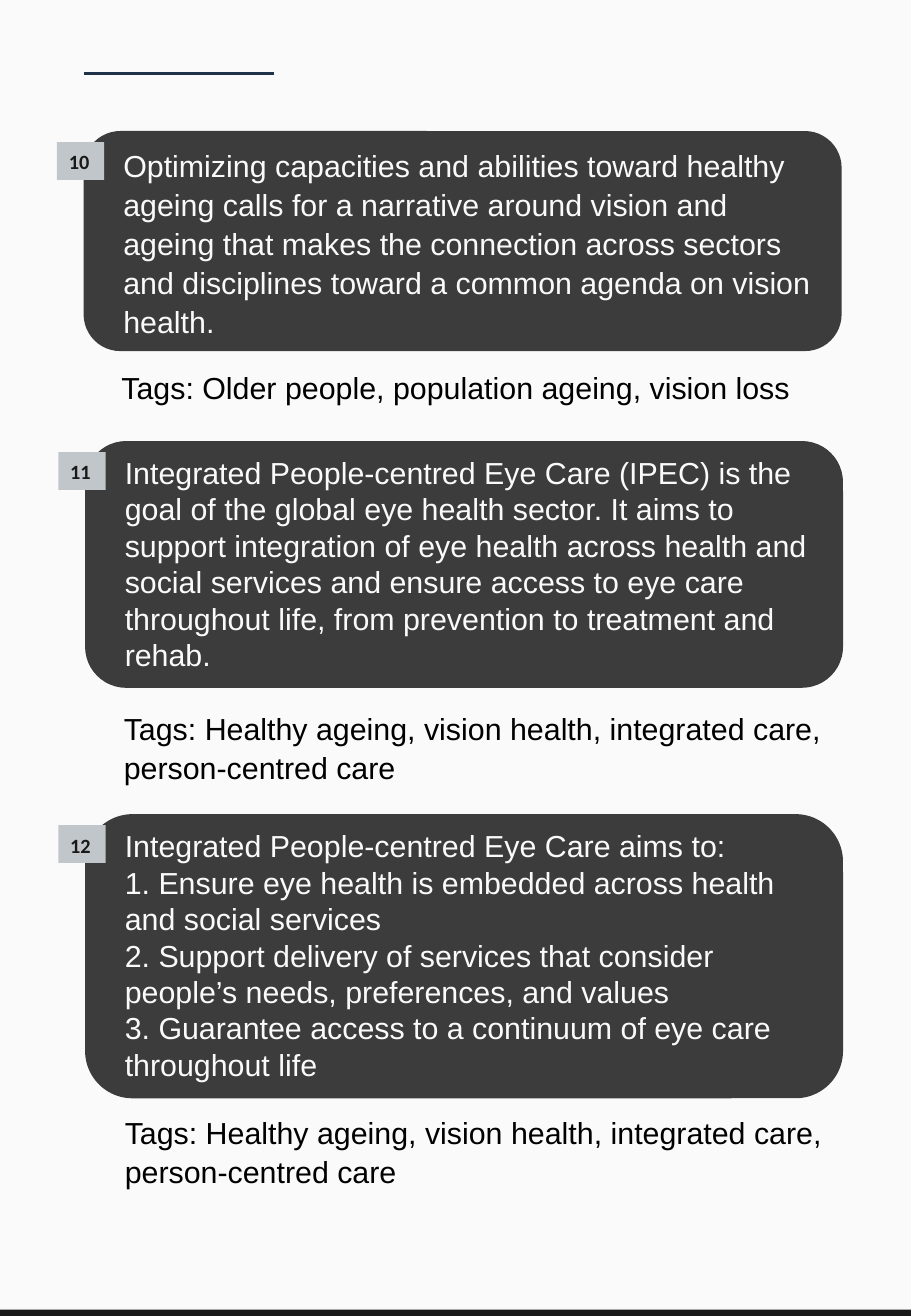
"""Build a portrait slide of three numbered eye-health messages with tags."""
from lxml import etree
from pptx import Presentation
from pptx.dml.color import RGBColor
from pptx.enum.shapes import MSO_CONNECTOR, MSO_SHAPE
from pptx.enum.text import MSO_ANCHOR, PP_ALIGN
from pptx.oxml.ns import qn
from pptx.util import Cm, Pt

RECTANGLE = MSO_SHAPE.RECTANGLE
ROUNDED = MSO_SHAPE.ROUNDED_RECTANGLE
STRAIGHT = MSO_CONNECTOR.STRAIGHT
LEFT = PP_ALIGN.LEFT
TOP = MSO_ANCHOR.TOP

PAPER, CARD, BADGE, INK, BLACK, RULE = (
    "FAFAFA", "3C3C3C", "C0C6C9", "191919", "000000", "1F3248")
SLIDE_WIDTH, SLIDE_HEIGHT = 19.05, 27.51
CARD_WIDTH, BODY_WIDTH, TAG_WIDTH = 15.85, 14.99, 15.29
FOOTER_HEIGHT = 0.13

CARE_TAGS = "Tags: Healthy ageing, vision health, integrated care, person-centred care"
MESSAGES = [
    {"number": "10", "left": 1.75, "top": 2.74, "height": 4.6, "spacing": 1.07,
     "body": ["Optimizing capacities and abilities toward healthy ageing calls for "
              "a narrative around vision and ageing that makes the connection across "
              "sectors and disciplines toward a common agenda on vision health."],
     "tags": "Tags: Older people, population ageing, vision loss",
     "tag_box": (2.29, 7.54, TAG_WIDTH, 1.02)},
    {"number": "11", "left": 1.78, "top": 9.22, "height": 5.16, "spacing": 1.0,
     "body": ["Integrated People-centred Eye Care (IPEC) is the goal of the global "
              "eye health sector. It aims to support integration of eye health across "
              "health and social services and ensure access to eye care throughout "
              "life, from prevention to treatment and rehab."],
     "tags": CARE_TAGS, "tag_box": (2.34, 14.66, TAG_WIDTH, 1.85)},
    {"number": "12", "left": 1.78, "top": 17.02, "height": 5.94, "spacing": 1.0,
     "body": ["Integrated People-centred Eye Care aims to:",
              "1. Ensure eye health is embedded across health and social services",
              "2. Support delivery of services that consider people’s needs, "
              "preferences, and values",
              "3. Guarantee access to a continuum of eye care throughout life"],
     "tags": CARE_TAGS, "tag_box": (2.36, 23.11, TAG_WIDTH, 1.85)},
]


def color(hex_string):
    return RGBColor.from_string(hex_string)


def write_text(shape, paragraphs, ink, size=18, font="Arial", bold=False, spacing=1.07):
    frame = shape.text_frame
    frame.word_wrap = True
    frame.vertical_anchor = TOP
    for index, text in enumerate(paragraphs):
        paragraph = frame.add_paragraph() if index else frame.paragraphs[0]
        paragraph.alignment = LEFT
        paragraph.line_spacing = spacing
        run = paragraph.add_run()
        run.text = text
        run.font.name = font
        run.font.size = Pt(size)
        run.font.bold = bold
        run.font.color.rgb = color(ink)


def add_block(slide, kind, box, fill):
    shape = slide.shapes.add_shape(kind, *map(Cm, box))
    shape.shadow.inherit = False
    shape.fill.solid()
    shape.fill.fore_color.rgb = color(fill)
    shape.line.fill.background()
    return shape


def add_text_box(slide, box, paragraphs, ink, **text_format):
    shape = slide.shapes.add_textbox(*map(Cm, box))
    write_text(shape, paragraphs, ink, **text_format)


def add_message(slide, message):
    left, top, height = message["left"], message["top"], message["height"]
    add_block(slide, ROUNDED, (left, top, CARD_WIDTH, height), CARD)
    add_text_box(slide, (left + 0.58, top + 0.15, BODY_WIDTH, height - 0.3),
                 message["body"], PAPER, spacing=message["spacing"])
    add_text_box(slide, message["tag_box"], [message["tags"]], BLACK)
    badge = add_block(slide, RECTANGLE, (left - 0.56, top + 0.23, 0.99, 0.79), BADGE)
    write_text(badge, [message["number"]], INK, size=12, font="Calibri", bold=True)


def add_rule(slide):
    rule = slide.shapes.add_connector(STRAIGHT, Cm(1.75), Cm(1.54), Cm(5.72), Cm(1.54))
    rule.line.color.rgb = color(RULE)
    rule.line.width = Pt(1.75)
    etree.SubElement(rule._element.spPr, qn("a:effectLst"))


def main():
    presentation = Presentation()
    presentation.slide_width = Cm(SLIDE_WIDTH)
    presentation.slide_height = Cm(SLIDE_HEIGHT)
    slide = presentation.slides.add_slide(presentation.slide_layouts[6])
    slide.background.fill.solid()
    slide.background.fill.fore_color.rgb = color(PAPER)
    add_rule(slide)
    for message in MESSAGES:
        add_message(slide, message)
    footer_top = SLIDE_HEIGHT - FOOTER_HEIGHT
    add_block(slide, RECTANGLE, (0, footer_top, SLIDE_WIDTH, FOOTER_HEIGHT), INK)
    presentation.save("out.pptx")


if __name__ == "__main__":
    main()
